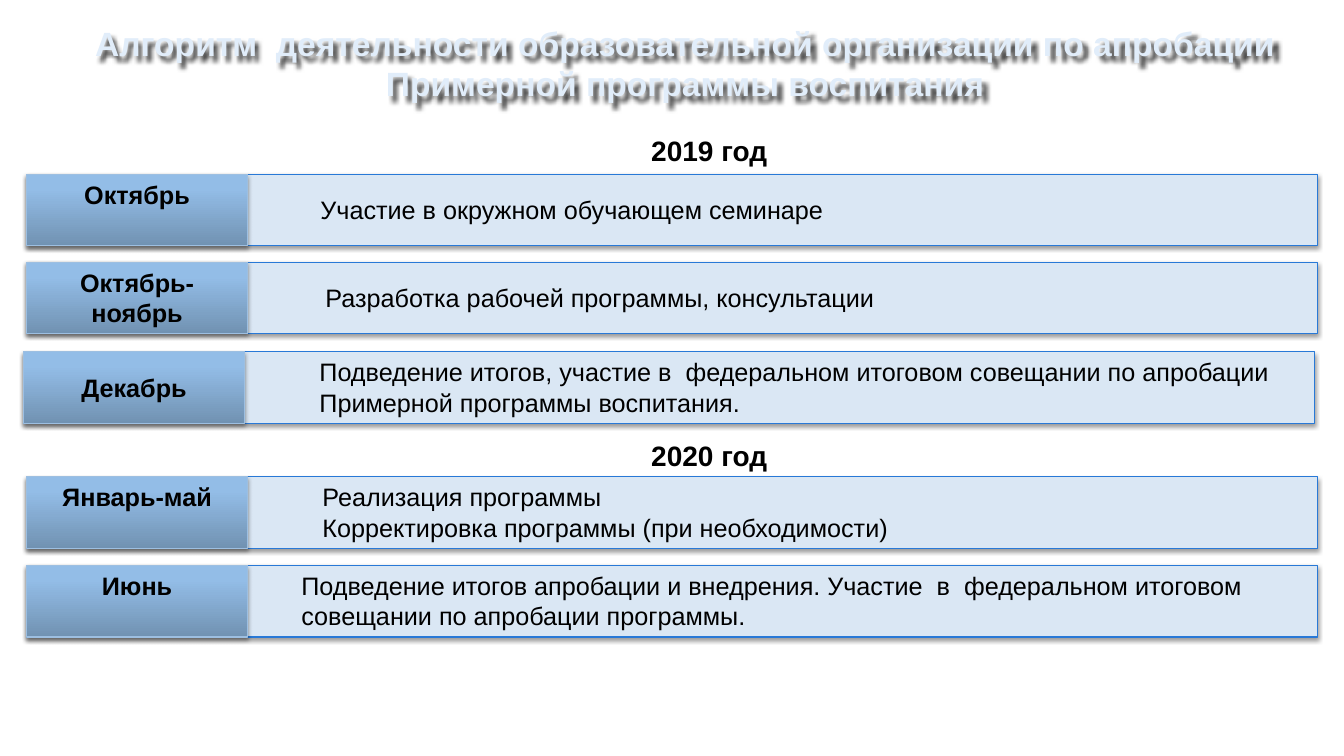
from dataclasses import dataclass

from lxml import etree
from pptx import Presentation
from pptx.dml.color import RGBColor
from pptx.enum import shapes, text
from pptx.oxml import ns
from pptx.util import Emu, Pt

SCALE = 9144
BAR_W, BAR_H, MONTH_W, TASK_W = 1281, 71, 220, 997
TOP, MID = text.MSO_ANCHOR.TOP, text.MSO_ANCHOR.MIDDLE
LEFT, CENTER = text.PP_ALIGN.LEFT, text.PP_ALIGN.CENTER


@dataclass
class Box:
    x: int
    y: int
    w: int
    h: int

    def emu(self) -> list[Emu]:
        return [Emu(side * SCALE) for side in (self.x, self.y, self.w, self.h)]


@dataclass
class Stage:
    x: int
    y: int
    month: str
    task: str
    task_x: int
    lines: int = 2
    anchor: text.MSO_ANCHOR = TOP


@dataclass
class Year:
    y: int
    name: str


STAGES = [
    Stage(26, 173, "Октябрь", "Участие в окружном обучающем семинаре", 308, lines=1),
    Stage(26, 260, "Октябрь-ноябрь", "Разработка рабочей программы, консультации", 313, lines=1),
    Stage(23, 349, "Декабрь",
          "Подведение итогов, участие в  федеральном итоговом совещании "
          "по апробации Примерной программы воспитания.", 307, anchor=MID),
    Stage(26, 473, "Январь-май",
          "Реализация программы\nКорректировка программы (при необходимости)", 310),
    Stage(26, 561, "Июнь",
          "Подведение итогов апробации и внедрения. Участие  в  федеральном "
          "итоговом совещании по апробации программы.", 289),
]
YEARS = [Year(128, "2019 год"), Year(430, "2020 год")]


def color(code: str) -> RGBColor:
    return RGBColor.from_string(code)


def shade(shape, alpha: int, blur: float, dist: float, angle: int) -> None:
    shape.shadow.inherit = False
    effects = shape._element.spPr.find(ns.qn("a:effectLst"))
    outer = etree.SubElement(
        effects, ns.qn("a:outerShdw"), blurRad=str(Pt(blur)), dist=str(Pt(dist)),
        dir=str(angle * 60000), algn="ctr", rotWithShape="0")
    black = etree.SubElement(outer, ns.qn("a:srgbClr"), val="000000")
    etree.SubElement(black, ns.qn("a:alpha"), val=str(alpha * 1000))


def write(shape, words: str, size: int = 18, ink: str = "000000", bold: bool = False,
          align: text.PP_ALIGN = LEFT, anchor: text.MSO_ANCHOR = TOP) -> None:
    frame = shape.text_frame
    frame.word_wrap = True
    frame.vertical_anchor = anchor
    frame.text = words
    for para in frame.paragraphs:
        para.alignment = align
        para.font.name = "Arial"
        para.font.size = Pt(size)
        para.font.bold = bold
        para.font.color.rgb = color(ink)


def label(slide, box: Box, words: str, **style):
    shape = slide.shapes.add_textbox(*box.emu())
    write(shape, words, **style)
    return shape


def panel(slide, box: Box, edge: str):
    shape = slide.shapes.add_shape(shapes.MSO_SHAPE.RECTANGLE, *box.emu())
    shape.line.color.rgb = color(edge)
    shape.line.width = Pt(0.75)
    return shape


def draw(slide, stage: Stage) -> None:
    bar = panel(slide, Box(stage.x, stage.y, BAR_W, BAR_H), "2879D7")
    bar.fill.solid()
    bar.fill.fore_color.rgb = color("DAE7F4")
    shade(bar, 38, 3.1, 1.6, 90)

    month = panel(slide, Box(stage.x, stage.y, MONTH_W, BAR_H), "9DBFE1")
    month.fill.gradient()
    month.fill.gradient_angle = 90
    for stop, (place, code) in zip(month.fill.gradient_stops, [(0, "7192B2"), (0.8, "93BDE7")]):
        stop.position = place
        stop.color.rgb = color(code)
    shade(month, 35, 3.1, 1.8, 90)
    write(month, stage.month, bold=True, align=CENTER, anchor=stage.anchor)

    height = 40 if stage.lines == 1 else BAR_H
    top = stage.y + (BAR_H - height) // 2
    label(slide, Box(stage.task_x, top, TASK_W, height), stage.task)


def main() -> None:
    deck = Presentation()
    deck.slide_width, deck.slide_height = Emu(1333 * SCALE), Emu(750 * SCALE)
    slide = deck.slides.add_slide(deck.slide_layouts[6])
    title = label(
        slide, Box(26, 0, 1307, 125),
        "Алгоритм  деятельности образовательной организации по апробации "
        "Примерной программы воспитания",
        size=24, ink="E1EDFA", bold=True, align=CENTER, anchor=MID)
    shade(title, 75, 3, 4, 45)
    for stage in STAGES:
        draw(slide, stage)
    for year in YEARS:
        label(slide, Box(478, year.y, 451, 44), year.name, size=20, bold=True, align=CENTER)
    deck.save("out.pptx")


if __name__ == "__main__":
    main()
